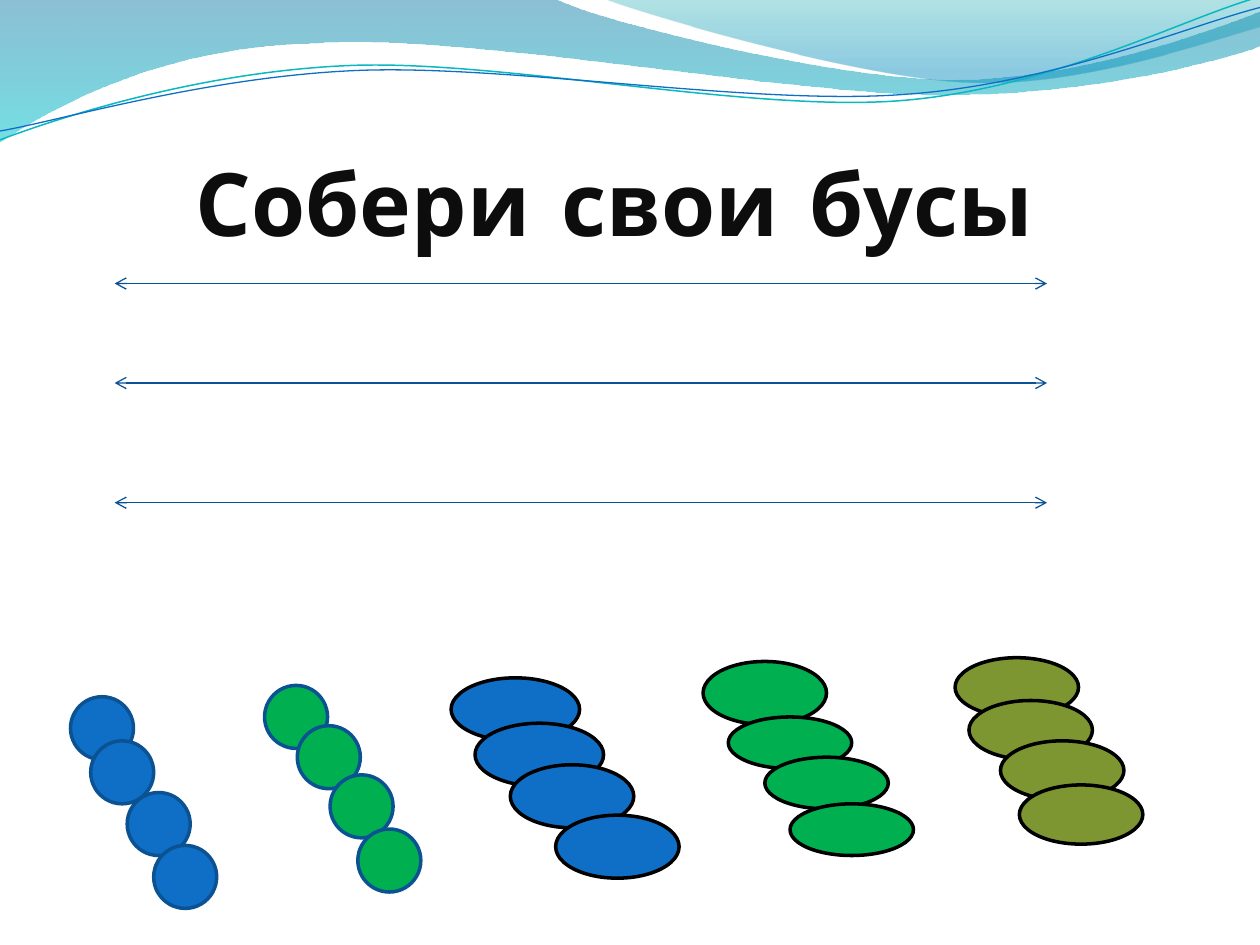
import dataclasses
import math

import lxml.etree
import pptx
import pptx.dml.color
import pptx.enum.shapes
import pptx.enum.text
import pptx.oxml.ns
import pptx.util

Inches = pptx.util.Inches
Pt = pptx.util.Pt
Shape = pptx.enum.shapes.MSO_SHAPE


@dataclasses.dataclass(frozen=True)
class Theme:
    font: str = "Comic Neue"
    title_size: float = 50
    title: str = "0D0D0D"
    blue: str = "0F6FC6"
    green: str = "00B050"
    olive: str = "7E9632"
    black: str = "000000"
    rim: str = "0B5292"
    thread: str = "095295"
    teal: str = "0AB8BF"
    bead_line: float = 2
    thread_line: float = 0.75
    tilt: float = -2.7


THEME = Theme()
ROUND = (0.5, 0.5)

STRINGS = [
    (Shape.FLOWCHART_CONNECTOR, THEME.blue, THEME.rim,
     [(0.56, 5.53, ROUND), (1.01, 6.29, ROUND), (0.72, 5.88, ROUND), (1.22, 6.71, ROUND)]),
    (Shape.FLOWCHART_CONNECTOR, THEME.green, THEME.rim,
     [(2.1, 5.44, ROUND), (2.36, 5.76, ROUND), (2.62, 6.15, ROUND), (2.84, 6.58, ROUND)]),
    (Shape.OVAL, THEME.blue, THEME.black,
     [(3.58, 5.38, (1.02, 0.5)), (3.77, 5.74, (1.02, 0.5)),
      (4.05, 6.07, (0.98, 0.5)), (4.41, 6.47, (0.98, 0.5))]),
    (Shape.OVAL, THEME.green, THEME.black,
     [(5.58, 5.25, (0.98, 0.5)), (5.78, 5.69, (0.98, 0.41)),
      (6.07, 6.01, (0.98, 0.41)), (6.27, 6.38, (0.98, 0.41))]),
    (Shape.OVAL, THEME.olive, THEME.black,
     [(x, y, (0.98, 0.47)) for x, y in
      [(7.58, 5.22), (7.69, 5.56), (7.94, 5.88), (8.09, 6.23)]]),
]

BANDS = [
    ([[(0, 0)], [(4.4, -0.01)],
      [(4.76, 0.17), (6.64, 0.63), (7.58, 0.63)],
      [(8.53, 0.63), (9.58, 0.26), (10, 0.09)], [(10.01, 0.36)],
      [(9.83, 0.44), (8.7, 0.76), (7.46, 0.75)],
      [(6.22, 0.75), (3.82, 0.28), (2.57, 0.34)],
      [(1.29, 0.36), (0.46, 0.83), (-0.01, 1.13)], [(0, 0)]],
     [(0, "0074A1", 45), (1, "00C6CF", 55)]),
    ([[(4.79, -0.01)],
      [(5.09, 0.11), (6.82, 0.62), (7.69, 0.65)],
      [(8.56, 0.69), (9.61, 0.32), (10, 0.21)], [(10, 0)], [(4.79, -0.01)]],
     [(0, "00A1A9", 30), (0.8, "008BBF", 45)]),
]

RIPPLES = [
    ([[(0, 1.11)],
      [(0.48, 0.93), (1.58, 0.57), (2.77, 0.52)],
      [(3.95, 0.47), (5.93, 0.89), (7.13, 0.8)],
      [(8.33, 0.71), (9.38, 0.15), (9.98, -0.02)]], (4.99, 0.57), THEME.teal, 0.85),
    ([[(0, 1.04)],
      [(0.47, 0.96), (1.64, 0.61), (2.83, 0.56)],
      [(4.03, 0.51), (5.97, 0.84), (7.17, 0.75)],
      [(8.36, 0.67), (9.41, 0.21), (10, 0.06)]], (5, 0.59), THEME.blue, 0.75),
]


def rgb(value):
    """Return a colour from its hex digits."""
    return pptx.dml.color.RGBColor.from_string(value)


def apply(target, values):
    """Set each named attribute on the target."""
    for name, value in values.items():
        setattr(target, name, value)


def add_xml(parent, tag, **attributes):
    """Append a drawing element to the parent."""
    return lxml.etree.SubElement(parent, pptx.oxml.ns.qn(tag), attributes)


def turn(point, center, degrees):
    """Turn a point clockwise about a center."""
    angle = math.radians(degrees)
    dx, dy = point[0] - center[0], point[1] - center[1]
    return (center[0] + dx * math.cos(angle) - dy * math.sin(angle),
            center[1] + dx * math.sin(angle) + dy * math.cos(angle))


class SlideBuilder:
    """Draw styled elements on the current slide."""

    def __init__(self, page, theme):
        """Keep the slide and its theme."""
        self.page = page
        self.theme = theme

    def outline(self, shape, color, width):
        """Give a shape a solid outline."""
        shape.line.color.rgb = rgb(color)
        shape.line.width = Pt(width)

    def curve(self, segments, close):
        """Build a master outline from lines and cubic curves."""
        start, *rest = [(Inches(x), Inches(y)) for part in segments for x, y in part]
        builder = self.page.shapes.build_freeform(*start, scale=1.0)
        builder.add_line_segments(rest, close=close)
        shape = builder.convert_to_shape()
        shape.shadow.inherit = False
        lines = iter(list(shape._element.iter(pptx.oxml.ns.qn("a:lnTo"))))
        for segment in segments[1:]:
            first, *others = [next(lines) for point in segment]
            if others:
                bend = add_xml(first.getparent(), "a:cubicBezTo")
                first.addprevious(bend)
                for line in (first, *others):
                    bend.append(line[0])
                    line.getparent().remove(line)
        master = self.page.slide_layout.slide_master
        master.shapes._spTree.append(shape._element)
        return shape

    def band(self, segments, stops):
        """Draw a translucent gradient wave."""
        shape = self.curve(segments, True)
        shape.line.fill.background()
        shape.fill.gradient()
        shape.fill.gradient_angle = 270
        for stop, (position, color, opacity) in zip(shape.fill.gradient_stops, stops):
            stop.position = position
            stop.color.rgb = rgb(color)
        nodes = shape.fill._xPr.iter(pptx.oxml.ns.qn("a:srgbClr"))
        for node, (position, color, opacity) in zip(nodes, stops):
            add_xml(node, "a:alpha", val=str(opacity * 1000))

    def ripple(self, segments, center, color, width):
        """Draw a thin tilted wavy line."""
        level = [[turn(point, center, -self.theme.tilt) for point in segment]
                 for segment in segments]
        shape = self.curve(level, False)
        shape.rotation = self.theme.tilt
        shape.fill.background()
        self.outline(shape, color, width)

    def title(self, text, left, top, width, height):
        """Place and format the title."""
        box = self.page.shapes.title
        apply(box, {"left": Inches(left), "top": Inches(top),
                    "width": Inches(width), "height": Inches(height)})
        apply(box.text_frame, {
            "margin_left": 0, "margin_right": 0, "margin_top": Inches(0.05),
            "margin_bottom": 0, "word_wrap": True,
            "auto_size": pptx.enum.text.MSO_AUTO_SIZE.NONE,
            "vertical_anchor": pptx.enum.text.MSO_ANCHOR.BOTTOM})
        para = box.text_frame.paragraphs[0]
        para.alignment = pptx.enum.text.PP_ALIGN.CENTER
        span = para.add_run()
        span.text = text
        apply(span.font, {"name": self.theme.font, "size": Pt(self.theme.title_size),
                          "bold": True})
        span.font.color.rgb = rgb(self.theme.title)

    def thread(self, left, right, y):
        """Draw a level line with an arrow at both ends."""
        line = self.page.shapes.add_connector(
            pptx.enum.shapes.MSO_CONNECTOR.STRAIGHT,
            Inches(left), Inches(y), Inches(right), Inches(y))
        self.outline(line, self.theme.thread, self.theme.thread_line)
        for tag in ("a:headEnd", "a:tailEnd"):
            add_xml(line.line._get_or_add_ln(), tag, type="arrow")
        add_xml(line._element.spPr, "a:effectLst")

    def bead(self, kind, fill, rim, left, top, size):
        """Draw one bead."""
        shape = self.page.shapes.add_shape(
            kind, Inches(left), Inches(top), *map(Inches, size))
        shape.shadow.inherit = False
        shape.fill.solid()
        shape.fill.fore_color.rgb = rgb(fill)
        self.outline(shape, rim, self.theme.bead_line)


def main():
    """Build and save the deck."""
    deck = pptx.Presentation()
    apply(deck, {"slide_width": Inches(10), "slide_height": Inches(7.5)})
    slide = SlideBuilder(deck.slides.add_slide(deck.slide_layouts[5]), THEME)
    for band in BANDS:
        slide.band(*band)
    for ripple in RIPPLES:
        slide.ripple(*ripple)
    slide.title("Собери свои бусы ", 0.5, 0.77, 9, 1.25)
    for y in (3.04, 3.99):
        slide.thread(0.91, 8.31, y)
    for kind, fill, rim, beads in STRINGS:
        for bead in beads:
            slide.bead(kind, fill, rim, *bead)
    slide.thread(0.91, 8.31, 2.25)
    deck.save("out.pptx")


if __name__ == "__main__":
    main()
